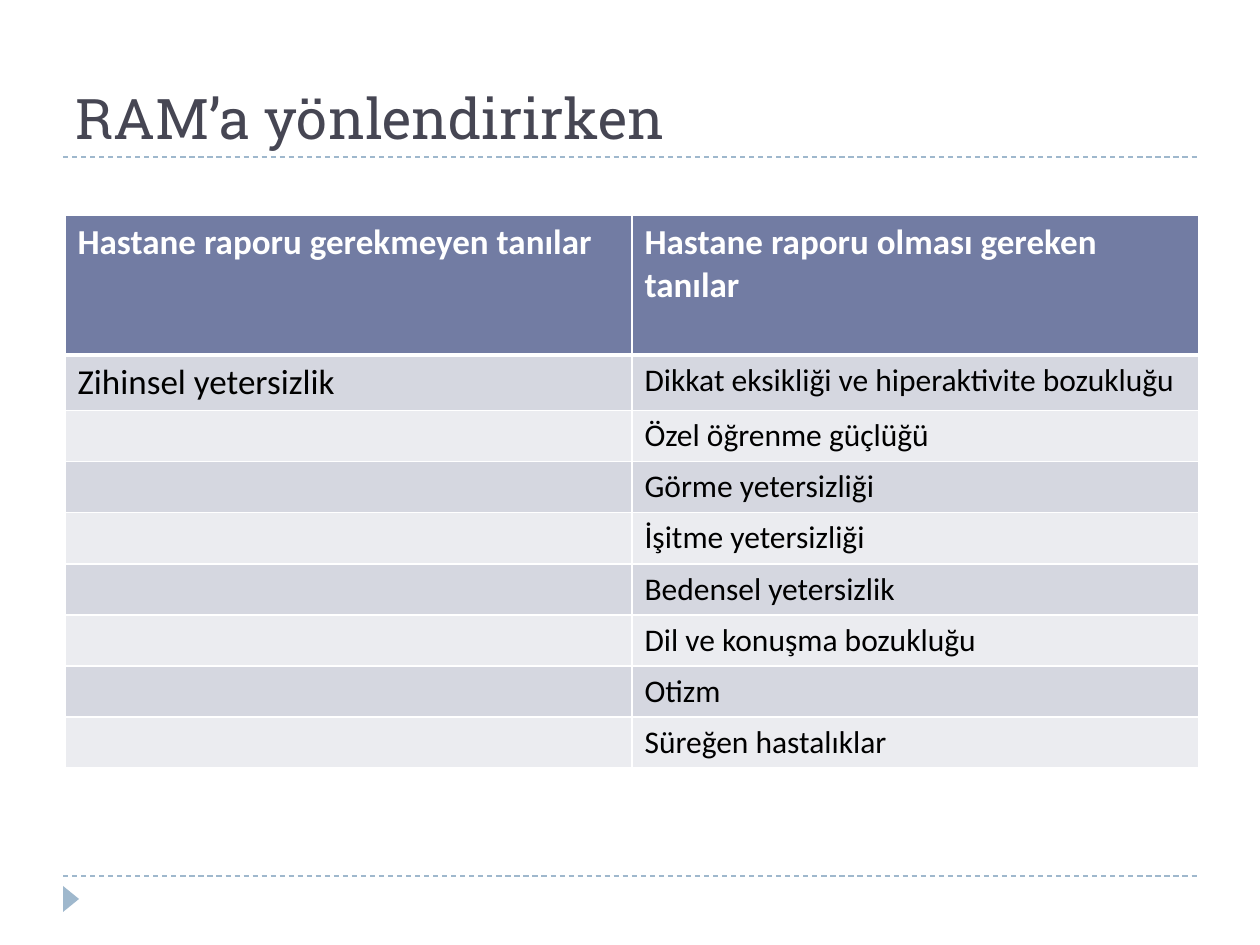
from lxml.etree import SubElement
from pptx import Presentation
from pptx.dml.color import RGBColor
from pptx.enum.dml import MSO_LINE
from pptx.enum.shapes import MSO_CONNECTOR, MSO_SHAPE
from pptx.enum.text import MSO_ANCHOR, PP_ALIGN
from pptx.oxml.ns import qn
from pptx.util import Emu, Pt

COLORS = {
    "title": "464653",
    "accent": "9FB8CD",
    "header": "727CA3",
    "band_dark": "D5D7E0",
    "band_light": "EBECF0",
    "white": "FFFFFF",
    "black": "000000",
}
HEADERS = ["Hastane raporu gerekmeyen tanılar", "Hastane raporu olması gereken tanılar"]
NO_REPORT = ["Zihinsel yetersizlik"]
REPORT = [
    "Dikkat eksikliği ve hiperaktivite bozukluğu",
    "Özel öğrenme güçlüğü",
    "Görme yetersizliği",
    "İşitme yetersizliği",
    "Bedensel yetersizlik",
    "Dil ve konuşma bozukluğu",
    "Otizm",
    "Süreğen hastalıklar",
]


def px(n):
    return Emu(round(n * 914400 / 126))


def color(name):
    return RGBColor.from_string(COLORS[name])


def style_font(p, name, size, color_name, bold=False):
    p.font.name = name
    p.font.size = Pt(size)
    p.font.bold = bold
    p.font.color.rgb = color(color_name)


def add_title(slide, text):
    sp = slide.shapes.title
    sp.left, sp.top, sp.width, sp.height = px(63), px(21), px(1134), px(136)
    tf = sp.text_frame
    tf.text = text
    tf.word_wrap = True
    tf.vertical_anchor = MSO_ANCHOR.BOTTOM
    p = tf.paragraphs[0]
    p.alignment = PP_ALIGN.LEFT
    style_font(p, "Roboto Slab", 32, "title")


def add_rule(slide, y):
    line = slide.shapes.add_connector(
        MSO_CONNECTOR.STRAIGHT, px(63), px(y), px(1197), px(y))
    line.line.color.rgb = color("accent")
    line.line.width = Pt(0.75)
    line.line.dash_style = MSO_LINE.DASH
    SubElement(line._element.spPr, qn("a:effectLst"))


def add_marker(slide):
    sp = slide.shapes.add_shape(
        MSO_SHAPE.ISOSCELES_TRIANGLE, px(58), px(891), px(26), px(16))
    sp.rotation = 90
    sp.shadow.inherit = False
    sp.fill.solid()
    sp.fill.fore_color.rgb = color("accent")
    sp.line.fill.background()


def set_borders(cell, widths):
    tcPr = cell._tc.get_or_add_tcPr()
    for side, width in widths.items():
        ln = SubElement(tcPr, qn(f"a:ln{side}"), w=str(Pt(width)))
        fill = SubElement(ln, qn("a:solidFill"))
        SubElement(fill, qn("a:srgbClr"), val=COLORS["white"])


def fill_cell(cell, text, size, text_color, fill, bold, widths):
    cell.text = text
    style_font(cell.text_frame.paragraphs[0], "Calibri", size, text_color, bold)
    set_borders(cell, widths)  # borders precede the fill in the cell properties
    cell.fill.solid()
    cell.fill.fore_color.rgb = color(fill)


def add_diagnosis_table(slide):
    heights = [140, 55] + [51] * (len(REPORT) - 1)
    table = slide.shapes.add_table(
        len(heights), 2, px(65), px(215), px(1134), px(sum(heights))).table
    for row, height in zip(table.rows, heights):
        row.height = px(height)
    for col in table.columns:
        col.width = px(567)

    # Header row, with a heavier line below
    for c, text in enumerate(HEADERS):
        fill_cell(table.cell(0, c), text, 20, "white", "header", True,
                  {"L": 1, "R": 1, "T": 1, "B": 3})

    # Banded body rows
    for c, (items, size) in enumerate([(NO_REPORT, 20), (REPORT, 18)]):
        for r in range(1, len(heights)):
            text = items[r - 1] if r <= len(items) else ""
            fill_cell(table.cell(r, c), text, size if text else 18, "black",
                      "band_dark" if r % 2 else "band_light", False,
                      {"L": 1, "R": 1, "T": 3 if r == 1 else 1, "B": 1})


def main():
    prs = Presentation()
    prs.slide_width, prs.slide_height = px(1260), px(945)
    slide = prs.slides.add_slide(prs.slide_layouts[5])

    # Frame: rules and corner marker
    for y in (876, 157):
        add_rule(slide, y)
    add_marker(slide)

    # Content
    add_title(slide, "RAM’a yönlendirirken")
    add_diagnosis_table(slide)
    prs.save("out.pptx")


if __name__ == "__main__":
    main()
